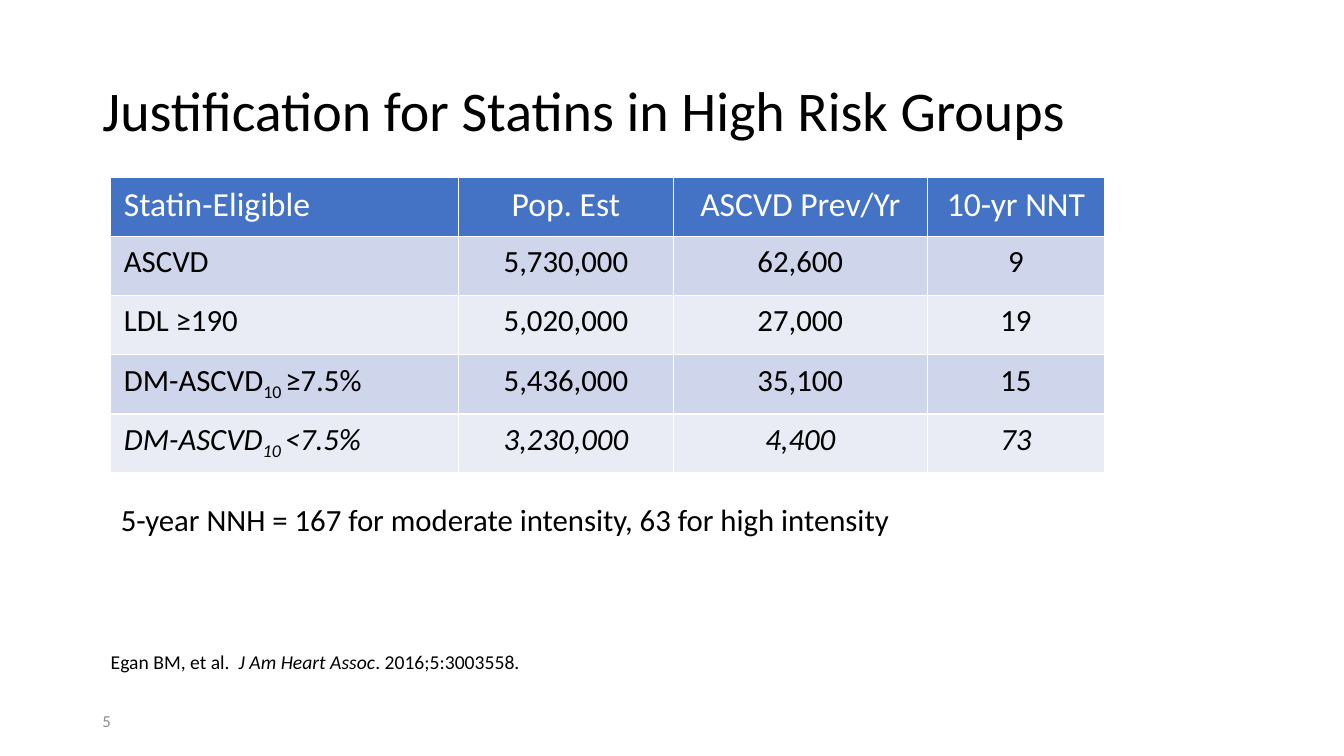
import dataclasses

import pptx
import pptx.dml.color
import pptx.enum.text
import pptx.util

ALIGN = pptx.enum.text.PP_ALIGN
ANCHOR = pptx.enum.text.MSO_ANCHOR
AUTO_SIZE = pptx.enum.text.MSO_AUTO_SIZE

ITALIC = {"italic": True}
SUBSCRIPT = {"baseline": "-25000"}


@dataclasses.dataclass(frozen=True)
class Theme:
    font: str = "Calibri"
    text: str = "000000"
    muted: str = "8C8C8C"
    header_text: str = "FFFFFF"
    header_fill: str = "4472C4"
    bands: tuple = ("CFD5EA", "E9EBF5")
    title_size: int = 40
    header_size: int = 24
    body_size: int = 22
    citation_size: int = 14
    number_size: int = 12


def set_attributes(target, values):
    for name, value in values.items():
        setattr(target, name, value)


class SlideBuilder:
    """Places elements on a grid of 80 columns by 45 rows."""

    COLUMNS, ROWS = 80, 45

    def __init__(self, presentation, theme):
        self.theme = theme
        self.column = presentation.slide_width / self.COLUMNS
        self.row = presentation.slide_height / self.ROWS
        self.slide = presentation.slides.add_slide(presentation.slide_layouts[5])

    def box(self, left, top, width, height):
        return (round(left * self.column), round(top * self.row),
                round(width * self.column), round(height * self.row))

    def add_runs(self, frame, runs, size, color=None, align=ALIGN.LEFT, spacing=1.0):
        """Fill a text frame with one paragraph of (text, format) runs."""
        paragraph = frame.paragraphs[0]
        set_attributes(paragraph, {"alignment": align, "line_spacing": spacing})
        for text, style in runs:
            run = paragraph.add_run()
            run.text = text
            values = {"name": self.theme.font, "size": pptx.util.Pt(size),
                      "bold": False, "italic": style.get("italic", False)}
            set_attributes(run.font, values)
            run.font.color.rgb = pptx.dml.color.RGBColor.from_string(
                color or self.theme.text)
            if "baseline" in style:
                run._r.get_or_add_rPr().set("baseline", style["baseline"])

    def title(self, area, text):
        shape = self.slide.shapes.title
        names = ("left", "top", "width", "height")
        set_attributes(shape, dict(zip(names, self.box(*area))))
        set_attributes(shape.text_frame, {
            "vertical_anchor": ANCHOR.MIDDLE, "auto_size": AUTO_SIZE.NONE,
            "word_wrap": True})
        self.add_runs(shape.text_frame, [(text, {})], self.theme.title_size,
                      spacing=0.9)

    def text(self, area, runs, size, color=None, **frame_values):
        frame = self.slide.shapes.add_textbox(*self.box(*area)).text_frame
        set_attributes(frame, {"word_wrap": True, **frame_values})
        self.add_runs(frame, runs, size, color)

    def table(self, left, top, widths, row_height, rows):
        area = self.box(left, top, sum(widths), row_height * len(rows))
        table = self.slide.shapes.add_table(len(rows), len(widths), *area).table
        for column, width in zip(table.columns, widths):
            column.width = round(width * self.column)
        for row_index, row in enumerate(rows):
            for column_index, runs in enumerate(row):
                self.cell(table.cell(row_index, column_index), runs,
                          row_index, column_index)

    def cell(self, cell, runs, row_index, column_index):
        theme = self.theme
        if row_index == 0:
            fill, size, color = theme.header_fill, theme.header_size, theme.header_text
        else:
            fill = theme.bands[(row_index - 1) % len(theme.bands)]
            size, color = theme.body_size, theme.text
        cell.fill.solid()
        cell.fill.fore_color.rgb = pptx.dml.color.RGBColor.from_string(fill)
        side, edge = pptx.util.Inches(0.13), pptx.util.Inches(0.07)
        set_attributes(cell, {"margin_left": side, "margin_right": side,
                              "margin_top": edge, "margin_bottom": edge})
        align = ALIGN.CENTER if column_index else ALIGN.LEFT
        self.add_runs(cell.text_frame, runs, size, color, align)


def plain(*texts, style=None):
    return [[(text, style or {})] for text in texts]


def diabetes_group(threshold, style):
    return [("DM-ASCVD", style), ("10 ", {**style, **SUBSCRIPT}), (threshold, style)]


def main():
    presentation = pptx.Presentation()
    presentation.slide_width = pptx.util.Inches(13.33)
    presentation.slide_height = pptx.util.Inches(7.5)
    theme = Theme()
    builder = SlideBuilder(presentation, theme)

    # Title and slide number
    builder.title((5.5, 2.4, 69, 8.7), "Justification for Statins in High Risk Groups")
    builder.text((5.5, 41.7, 18, 2.4), [("5", {})], theme.number_size, theme.muted,
                 vertical_anchor=ANCHOR.MIDDLE)

    # Statin benefit by risk group
    builder.table(6.6, 10.56, (20.7, 12.78, 15.12, 10.56), 3.52, [
        plain("Statin-Eligible", "Pop. Est", "ASCVD Prev/Yr", "10-yr NNT"),
        plain("ASCVD", "5,730,000", "62,600", "9"),
        plain("LDL ≥190", "5,020,000", "27,000", "19"),
        [diabetes_group("≥7.5%", {}), *plain("5,436,000", "35,100", "15")],
        [diabetes_group("<7.5%", ITALIC),
         *plain("3,230,000", "4,400", "73", style=ITALIC)],
    ])

    # Citation and number needed to harm
    builder.text((6, 38.4, 57.84, 2.04),
                 [("Egan BM, et al.  ", {}), ("J Am Heart Assoc", ITALIC),
                  (". 2016;5:3003558.", {})],
                 theme.citation_size, auto_size=AUTO_SIZE.SHAPE_TO_FIT_TEXT)
    builder.text((6.6, 29.52, 47.52, 2.82),
                 [("5-year NNH = 167 for moderate intensity, 63 for high intensity", {})],
                 theme.body_size, word_wrap=False,
                 auto_size=AUTO_SIZE.SHAPE_TO_FIT_TEXT)

    presentation.save("out.pptx")


if __name__ == "__main__":
    main()
